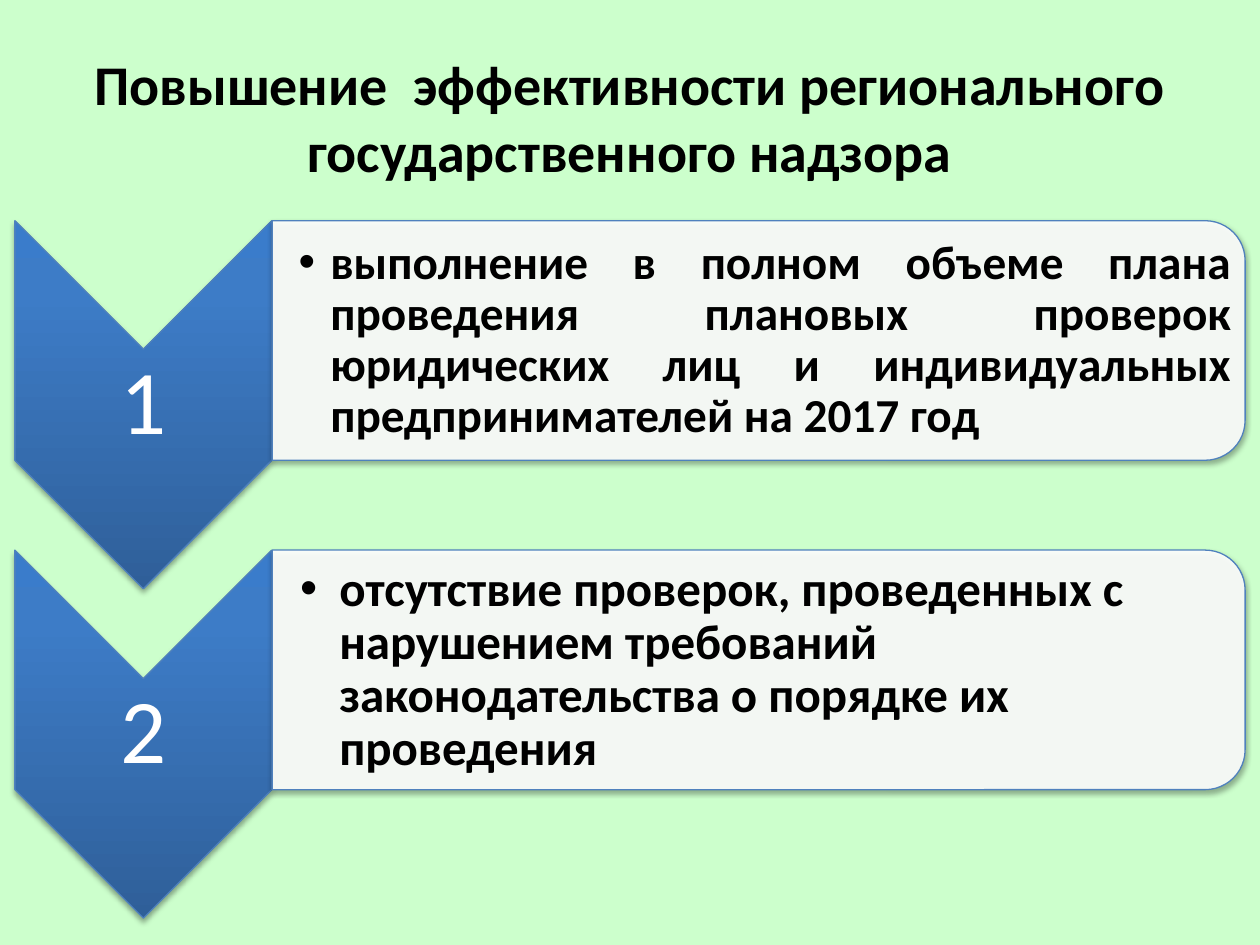
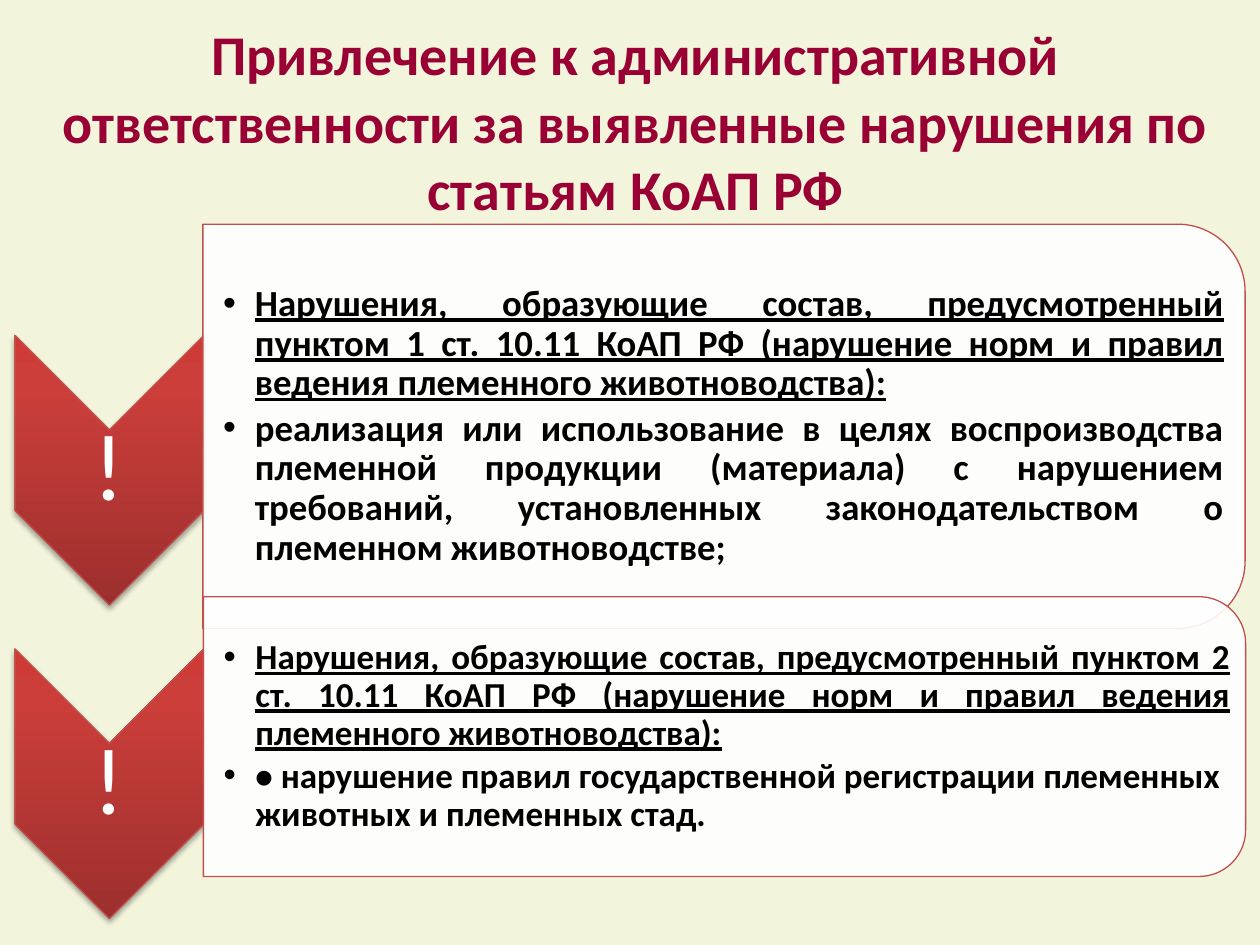
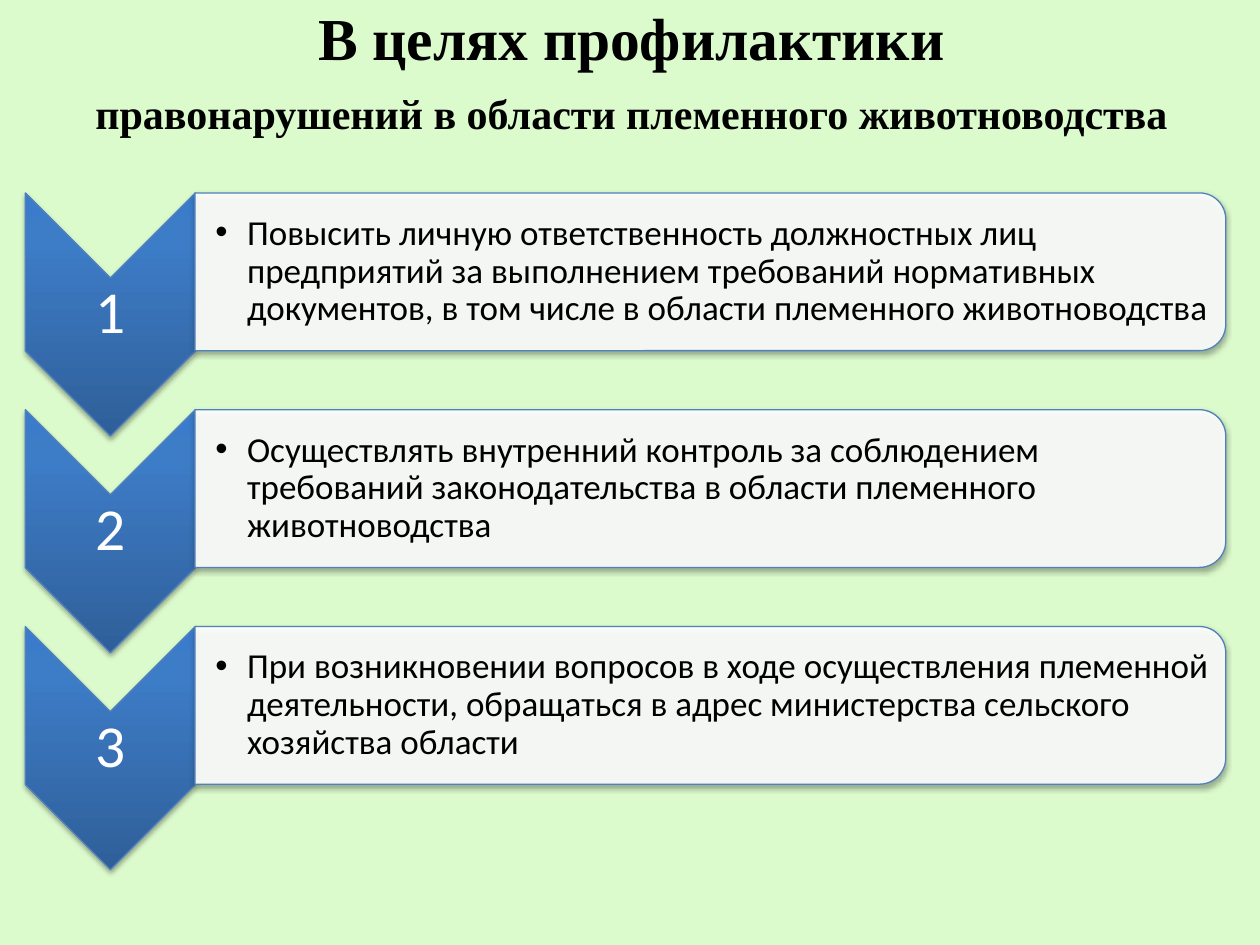
from dataclasses import dataclass

from pptx import Presentation
from pptx.dml.color import RGBColor
from pptx.enum.shapes import MSO_SHAPE
from pptx.enum.text import MSO_ANCHOR, PP_ALIGN
from pptx.oxml import parse_xml
from pptx.oxml.ns import nsdecls, qn
from pptx.util import Cm, Pt

BLACK = RGBColor(0x00, 0x00, 0x00)
WHITE = RGBColor(0xFF, 0xFF, 0xFF)
CRIMSON = RGBColor(0x99, 0x00, 0x33)
MINT = RGBColor(0xCC, 0xFF, 0xCC)
CREAM = RGBColor(0xF3, 0xF4, 0xDC)
LIGHT_GREEN = RGBColor(0xDC, 0xFB, 0xCD)
BLUE_LINE = RGBColor(0x4F, 0x81, 0xBD)
BLUE_STOPS = (
    (0, RGBColor(0x2F, 0x5F, 0x99)),
    (80, RGBColor(0x3D, 0x7C, 0xC7)),
    (100, RGBColor(0x3A, 0x7C, 0xCB)),
)
RED_LINE = RGBColor(0xC0, 0x50, 0x4D)
RED_STOPS = (
    (0, RGBColor(0x9C, 0x2F, 0x2D)),
    (80, RGBColor(0xCB, 0x3E, 0x3A)),
    (100, RGBColor(0xCE, 0x3B, 0x37)),
)

BODY_FONT = "Calibri"
SERIF_FONT = "Times New Roman"
CORNER_INSET = 0.0488  # share of a card's height kept clear of its rounded corners


@dataclass
class Chevrons:
    """Column of chevrons: place of the first, size and step in cm, label size in points."""
    left: float
    top: float
    width: float
    height: float
    step: float
    label_size: int
    label_margin: float


@dataclass
class CardText:
    size: int
    bold: bool = True
    margin_left: float = 0.41
    margin: float = 0.03
    indent: float = 0.64


class DeckBuilder:
    def __init__(self):
        self.deck = Presentation()
        self.deck.slide_width = Cm(25.4)
        self.deck.slide_height = Cm(19.05)
        self.page = None
        self.line_color = BLUE_LINE
        self.stops = BLUE_STOPS

    def start_page(self, background, line_color, stops):
        self.page = self.deck.slides.add_slide(self.deck.slide_layouts[6])
        self.page.background.fill.solid()
        self.page.background.fill.fore_color.rgb = background
        self.line_color = line_color
        self.stops = stops

    def text_box(self, left, top, width, height, margins):
        """Add an empty text box; margins run left, top, right, bottom."""
        box = self.page.shapes.add_textbox(Cm(left), Cm(top), Cm(width), Cm(height))
        frame = box.text_frame
        frame.word_wrap = True
        frame.vertical_anchor = MSO_ANCHOR.MIDDLE
        (frame.margin_left, frame.margin_top,
         frame.margin_right, frame.margin_bottom) = map(Cm, margins)
        return frame

    def format_runs(self, paragraph, size, color, font=BODY_FONT, bold=False, underline=False):
        for span in paragraph.runs:
            span.font.name = font
            span.font.size = Pt(size)
            span.font.bold = bold
            span.font.underline = underline
            span.font.color.rgb = color

    def title(self, place, lines, sizes=(32,), color=BLACK, font=BODY_FONT, gap=9):
        frame = self.text_box(*place, (0.25, 0.13, 0.25, 0.13))
        frame.text = "\n".join(lines)
        for index, (paragraph, size) in enumerate(zip(frame.paragraphs, sizes)):
            paragraph.alignment = PP_ALIGN.CENTER
            paragraph.space_before = Pt(gap if index else 0)
            self.format_runs(paragraph, size, color, font, bold=True)

    def turned_shape(self, kind, left, top, width, height, shadow=True):
        """Add a shape turned by 90 degrees that fills the given frame as seen."""
        shape = self.page.shapes.add_shape(
            kind,
            Cm(left + (width - height) / 2), Cm(top + (height - width) / 2),
            Cm(height), Cm(width))
        shape.rotation = 90
        shape.line.color.rgb = self.line_color
        shape.line.width = Pt(0.75)
        shape.shadow.inherit = False
        if shadow:
            effects = shape._element.spPr.find(qn("a:effectLst"))
            effects.append(parse_xml(
                f'<a:outerShdw {nsdecls("a")} blurRad="{Pt(3.1)}" dist="{Pt(1.8)}" '
                f'dir="5400000" rotWithShape="0"><a:srgbClr val="{BLACK}">'
                '<a:alpha val="35000"/></a:srgbClr></a:outerShdw>'))
        return shape

    def chevron(self, chevrons, index, label):
        top = chevrons.top + index * chevrons.step
        width, height = chevrons.width, chevrons.height
        shape = self.turned_shape(MSO_SHAPE.CHEVRON, chevrons.left, top, width, height)
        stops = "".join(
            f'<a:gs pos="{position * 1000}"><a:srgbClr val="{color}"/></a:gs>'
            for position, color in self.stops)
        shape._element.spPr.find(qn("a:prstGeom")).addnext(parse_xml(
            f'<a:gradFill {nsdecls("a")} rotWithShape="0"><a:gsLst>{stops}</a:gsLst>'
            '<a:lin ang="16200000" scaled="0"/></a:gradFill>'))

        frame = self.text_box(chevrons.left, top + width / 2, width, height - width,
                              [chevrons.label_margin] * 4)
        frame.text = label
        paragraph = frame.paragraphs[0]
        paragraph.alignment = PP_ALIGN.CENTER
        paragraph.line_spacing = 0.9
        self.format_runs(paragraph, chevrons.label_size, WHITE)

    def card(self, left, top, width, height, items, style, shadow=True):
        """Add a white card; each item is (text, justified, underlined)."""
        shape = self.turned_shape(MSO_SHAPE.ROUND_2_SAME_RECTANGLE,
                                  left, top, width, height, shadow)
        shape.fill.solid()
        shape.fill.fore_color.rgb = WHITE
        color = shape._element.spPr.find(qn("a:solidFill"))[0]
        color.append(parse_xml(f'<a:alpha {nsdecls("a")} val="90000"/>'))

        inset = CORNER_INSET * height
        frame = self.text_box(left, top + inset, width - inset, height - 2 * inset,
                              (style.margin_left,) + (style.margin,) * 3)
        frame.text = "\n".join(text for text, _, _ in items)
        for paragraph, (_, justified, underlined) in zip(frame.paragraphs, items):
            paragraph.alignment = PP_ALIGN.JUSTIFY if justified else PP_ALIGN.LEFT
            paragraph.line_spacing = 0.9
            paragraph.space_after = Pt(round(style.size * 0.15, 1))
            self.bullet(paragraph, style.indent)
            self.format_runs(paragraph, style.size, BLACK, bold=style.bold,
                             underline=underlined)

    def bullet(self, paragraph, indent):
        properties = paragraph._p.get_or_add_pPr()
        properties.set("marL", str(Cm(indent)))
        properties.set("indent", str(-Cm(indent)))
        properties.append(parse_xml(f'<a:buFont {nsdecls("a")} typeface="Arial"/>'))
        properties.append(parse_xml(f'<a:buChar {nsdecls("a")} char="•"/>'))


def build_supervision(builder):
    builder.start_page(MINT, BLUE_LINE, BLUE_STOPS)
    builder.title((1.27, 0.76, 22.86, 3.18),
                  ["Повышение  эффективности регионального государственного надзора"])
    chevrons = Chevrons(0.3, 4.45, 5.18, 7.42, 6.64, label_size=52, label_margin=0.1)
    goals = [
        ("выполнение в полном объеме плана проведения плановых проверок юридических лиц "
         "и индивидуальных предпринимателей на 2017 год",
         True, CardText(27, margin_left=0.53, margin=0.05)),
        ("отсутствие проверок, проведенных с нарушением требований законодательства "
         "о порядке их проведения",
         False, CardText(28, margin_left=0.56, margin=0.05, indent=0.79)),
    ]
    for index, (text, justified, style) in enumerate(goals):
        builder.chevron(chevrons, index, str(index + 1))
        builder.card(5.49, chevrons.top + index * chevrons.step, 19.61, 4.83,
                     [(text, justified, False)], style)


def build_liability(builder):
    builder.start_page(CREAM, RED_LINE, RED_STOPS)
    builder.title((0.71, 0.76, 24.21, 3.35),
                  ["Привлечение к административной ответственности за выявленные "
                   "нарушения по статьям КоАП РФ"], color=CRIMSON)
    chevrons = Chevrons(0.3, 6.76, 3.81, 5.44, 6.32, label_size=54, label_margin=0.1)
    offences = [
        (4.09, 4.52, 8.15, 21, True,
         "реализация или использование в целях воспроизводства племенной продукции "
         "(материала) с нарушением требований, установленных законодательством "
         "о племенном животноводстве;"),
        (4.1, 12.03, 5.64, 20, False,
         "• нарушение правил государственной регистрации племенных животных "
         "и племенных стад."),
    ]
    for index, (left, top, height, size, justified, text) in enumerate(offences):
        heading = (f"Нарушения, образующие состав, предусмотренный пунктом {index + 1} "
                   "ст. 10.11 КоАП РФ (нарушение норм и правил ведения племенного "
                   "животноводства):")
        builder.chevron(chevrons, index, "!")
        builder.card(left, top, 21.01, height,
                     [(heading, True, True), (text, justified, False)],
                     CardText(size), shadow=False)


def build_prevention(builder):
    builder.start_page(LIGHT_GREEN, BLUE_LINE, BLUE_STOPS)
    builder.title((1.3, 0, 22.86, 2.8),
                  ["В целях профилактики",
                   "правонарушений в области племенного животноводства"],
                  sizes=(34, 24), font=SERIF_FONT)
    chevrons = Chevrons(0.51, 3.89, 3.43, 4.9, 4.37, label_size=34, label_margin=0.05)
    measures = [
        "Повысить личную ответственность должностных лиц предприятий за выполнением "
        "требований нормативных документов, в том числе в области племенного "
        "животноводства",
        "Осуществлять внутренний контроль за соблюдением требований законодательства "
        "в области племенного животноводства",
        "При возникновении вопросов в ходе осуществления племенной деятельности, "
        "обращаться в адрес министерства сельского хозяйства области",
    ]
    for index, text in enumerate(measures):
        builder.chevron(chevrons, index, str(index + 1))
        builder.card(3.93, chevrons.top + index * chevrons.step, 20.78, 3.18,
                     [(text, False, False)], CardText(20, bold=False))


def main():
    builder = DeckBuilder()
    build_supervision(builder)
    build_liability(builder)
    build_prevention(builder)
    builder.deck.save("out.pptx")


if __name__ == "__main__":
    main()
